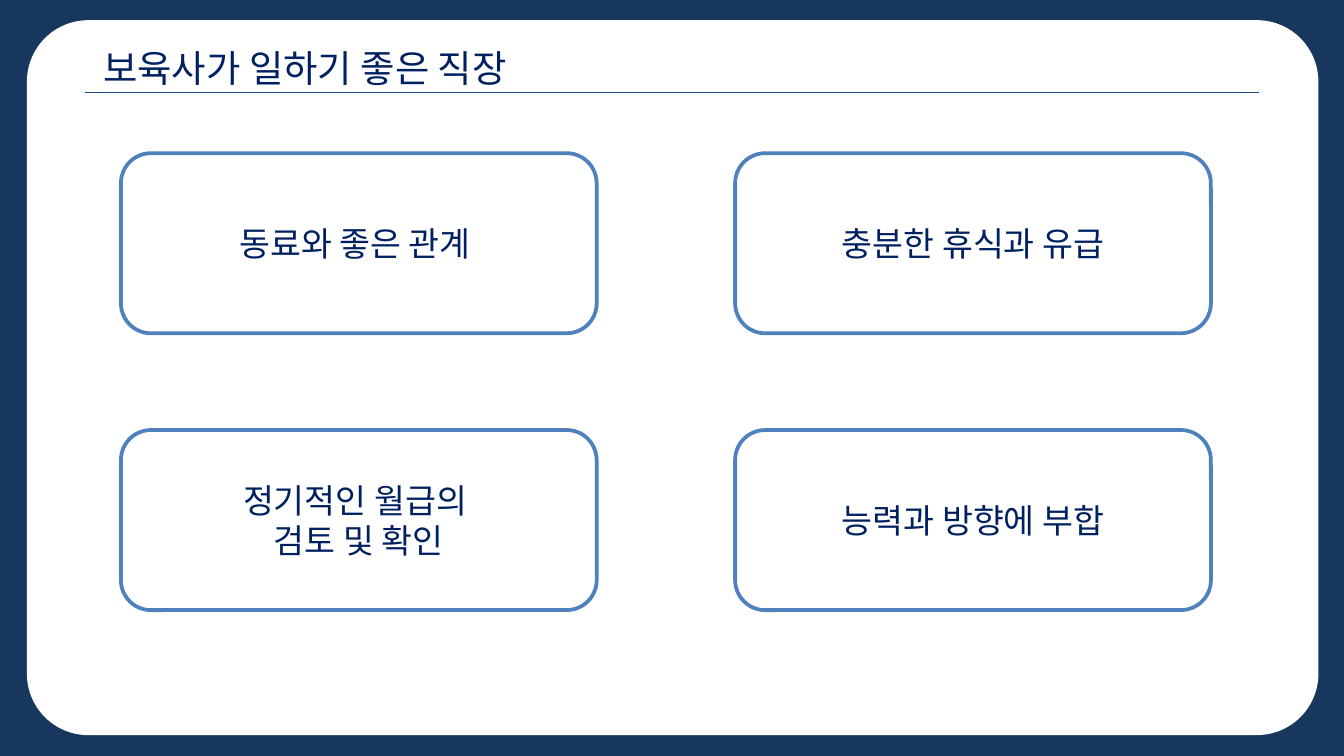
from lxml import etree
from pptx import Presentation
from pptx.dml.color import RGBColor
from pptx.enum.shapes import MSO_CONNECTOR as Connector, MSO_SHAPE as Shape
from pptx.enum.text import MSO_ANCHOR as Anchor, MSO_AUTO_SIZE as AutoSize, PP_ALIGN as Align
from pptx.oxml.ns import qn
from pptx.util import Inches, Pt

FONT = "Noto Sans CJK KR"
NAVY, WHITE, TEXT = "17375E", "FFFFFF", "002060"
RULE, CARD_LINE = "1F497D", "4F81BD"
CARDS = [
    ["동료와 좋은 관계 ", "충분한 휴식과 유급"],
    ["정기적인 월급의 \n검토 및 확인", "능력과 방향에 부합"],
]


def color(hex_value):
    return RGBColor.from_string(hex_value)


def write_text(frame, text, size, align):
    frame.word_wrap = True
    frame.text = text
    for para in frame.paragraphs:
        para.alignment = align
        font = para.font
        font.size, font.name = Pt(size), FONT
        font.color.rgb = color(TEXT)
        # Hangul takes the East Asian typeface, which follows a:latin.
        defaults = para._p.pPr.find(qn("a:defRPr"))
        etree.SubElement(defaults, qn("a:ea")).set("typeface", FONT)


def add_round_box(page, left, top, width, height, line=None):
    box = page.shapes.add_shape(Shape.ROUNDED_RECTANGLE, Inches(left), Inches(top),
                                Inches(width), Inches(height))
    box.shadow.inherit = False
    box.fill.solid()
    box.fill.fore_color.rgb = color(WHITE)
    if line:
        box.line.color.rgb = color(line)
        box.line.width = Pt(2)
    else:
        box.line.fill.background()
    return box


def add_panel(page, left, top, width, height):
    page.background.fill.solid()
    page.background.fill.fore_color.rgb = color(NAVY)
    add_round_box(page, left, top, width, height).adjustments[0] = 0.086


def add_heading(page, left, top, width, height, text):
    """Place the title above a rule along the bottom of the given box."""
    bottom = Inches(top + height)
    rule = page.shapes.add_connector(Connector.STRAIGHT, Inches(left), bottom,
                                     Inches(left + width), bottom)
    rule.line.color.rgb = color(RULE)
    rule.line.width = Pt(0.75)
    etree.SubElement(rule._element.spPr, qn("a:effectLst"))
    title = page.shapes.add_textbox(Inches(left + 0.04), Inches(top),
                                    Inches(5.04), Inches(0.44))
    write_text(title.text_frame, text, 20, Align.LEFT)
    title.text_frame.auto_size = AutoSize.SHAPE_TO_FIT_TEXT


def add_card_grid(page, left, top, width, height, rows):
    """Put equal cards in the corners of the given box."""
    card_width, card_height = 3.54, 1.34
    for row, texts in enumerate(rows):
        for column, text in enumerate(texts):
            card = add_round_box(page, left + column * (width - card_width),
                                 top + row * (height - card_height),
                                 card_width, card_height, CARD_LINE)
            write_text(card.text_frame, text, 18, Align.CENTER)
            card.text_frame.vertical_anchor = Anchor.MIDDLE


def main():
    deck = Presentation()
    deck.slide_width = Inches(10)
    deck.slide_height = deck.slide_width * 9 // 16
    page = deck.slides.add_slide(deck.slide_layouts[6])
    add_panel(page, 0.2, 0.15, 9.61, 5.32)
    add_heading(page, 0.63, 0.29, 8.74, 0.4, "보육사가 일하기 좋은 직장")
    add_card_grid(page, 0.9, 1.14, 8.11, 3.4, CARDS)
    deck.save("out.pptx")


if __name__ == "__main__":
    main()
